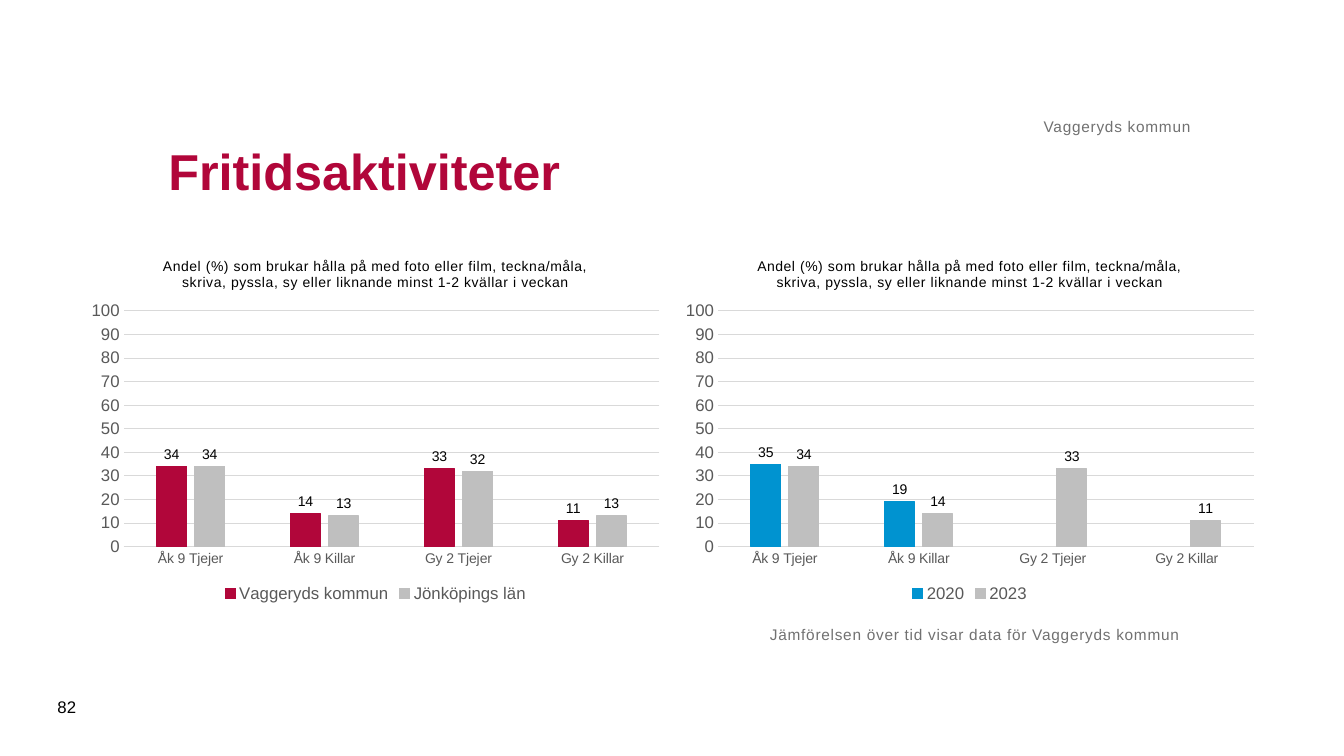
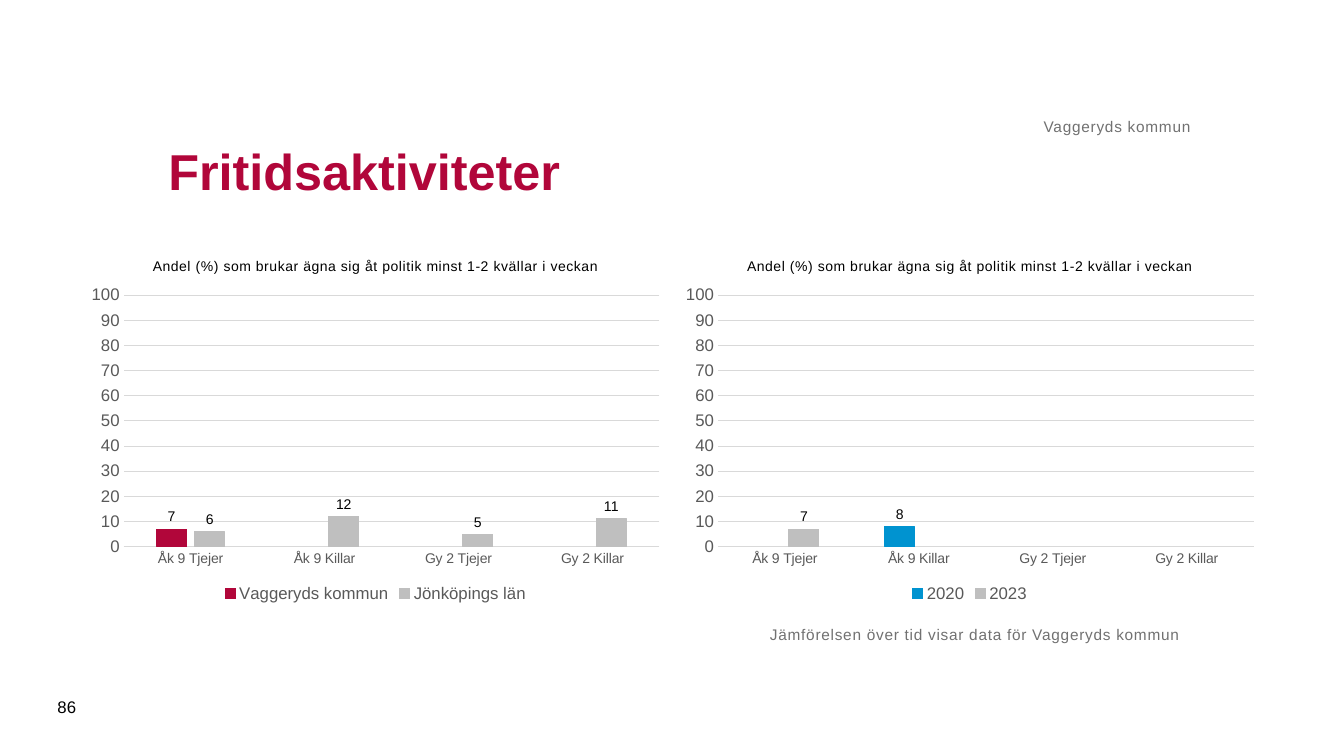
from dataclasses import dataclass

from pptx import Presentation as Deck
from pptx.chart.data import CategoryChartData as Data
from pptx.dml.color import RGBColor as Rgb
from pptx.enum.chart import XL_CHART_TYPE as Kind
from pptx.enum.chart import XL_LABEL_POSITION as Spot
from pptx.enum.chart import XL_LEGEND_POSITION as Side
from pptx.enum.chart import XL_TICK_MARK as Tick
from pptx.enum.text import MSO_ANCHOR as Anchor
from pptx.enum.text import MSO_AUTO_SIZE as Fit
from pptx.enum.text import PP_ALIGN as Align
from pptx.util import Pt

FACE = "Arial"
RED, BLUE, SILVER = "B1063A", "0093D0", "BFBFBF"
BLACK, DARK, GREY, RULE = "000000", "595959", "717171", "D9D9D9"
FORM = "#,##0;#,##0"
PLACE = "Vaggeryds kommun"
CATS = ("Åk 9 Tjejer", "Åk 9 Killar", "Gy 2 Tjejer", "Gy 2 Killar")


@dataclass(frozen=True)
class Box:
    left: float
    top: float
    width: float
    height: float

    def place(self) -> tuple:
        return Pt(self.left), Pt(self.top), Pt(self.width), Pt(self.height)


@dataclass(frozen=True)
class Style:
    size: float
    color: str
    bold: bool = False
    spread: int = 0  # letter spacing, hundredths of a point


@dataclass(frozen=True)
class Label:
    box: Box
    style: Style
    anchor: Anchor = Anchor.TOP
    align: Align = Align.LEFT
    inset: bool = False


@dataclass(frozen=True)
class Series:
    name: str
    color: str
    values: tuple


@dataclass(frozen=True)
class Page:
    number: str
    topic: str
    region: tuple
    county: tuple
    past: tuple


HEAD = Label(Box(113, 70.5, 737.5, 102), Style(36, RED, True), Anchor.MIDDLE, inset=True)
SMALL = Style(11, GREY, spread=50)
OWNER = Label(Box(113, 44.5, 737.5, 52.5), SMALL, Anchor.BOTTOM, Align.RIGHT)
NOTE = Label(Box(550, 446.5, 382.5, 67.5), SMALL)
NUMBER = Label(Box(34, 490.5, 41, 29), Style(12, BLACK), Anchor.MIDDLE, inset=True)
LEFT, RIGHT = (Box(x, 173, 422.5, 260.5) for x in (57, 481.5))
TOPIC, TICKS, NAMES = Style(10, BLACK, spread=50), Style(12, DARK), Style(10, DARK)

PAGES = (
    Page(
        "82",
        "Andel (%) som brukar hålla på med foto eller film, teckna/måla, "
        "skriva, pyssla, sy eller liknande minst 1-2 kvällar i veckan",
        (34, 14, 33, 11),
        (34, 13, 32, 13),
        (35, 19, None, None),
    ),
    Page(
        "86",
        "Andel (%) som brukar ägna sig åt politik minst 1-2 kvällar i veckan",
        (7, None, None, None),
        (6, 12, 5, 11),
        (None, 8, None, None),
    ),
)


def paint(color: str) -> Rgb:
    return Rgb.from_string(color)


def dress(font, style: Style) -> None:
    font.name, font.size, font.bold = FACE, Pt(style.size), style.bold
    font.color.rgb = paint(style.color)


def write(para, text: str, style: Style) -> None:
    run = para.add_run()
    run.text = text
    dress(run.font, style)
    if style.spread:
        run._r.get_or_add_rPr().set("spc", str(style.spread))


def fill(shape, label: Label, text: str) -> None:
    frame = shape.text_frame
    frame.word_wrap, frame.auto_size = True, Fit.NONE
    frame.vertical_anchor = label.anchor
    if not label.inset:
        frame.margin_left = frame.margin_right = Pt(0)
        frame.margin_top = frame.margin_bottom = Pt(0)
    para = frame.paragraphs[0]
    para.alignment = label.align
    write(para, text, label.style)


def rule(line, color: str) -> None:
    line.color.rgb, line.width = paint(color), Pt(0.75)


def set_axes(chart) -> None:
    cats, scale = chart.category_axis, chart.value_axis
    for axis, style in ((cats, NAMES), (scale, TICKS)):
        axis.major_tick_mark = axis.minor_tick_mark = Tick.NONE
        dress(axis.tick_labels.font, style)
    cats.has_major_gridlines = False
    rule(cats.format.line, RULE)
    scale.minimum_scale, scale.maximum_scale, scale.major_unit = 0, 100, 10
    scale.has_major_gridlines = True
    rule(scale.major_gridlines.format.line, RULE)
    scale.format.line.fill.background()
    scale.tick_labels.number_format = FORM
    scale.tick_labels.number_format_is_linked = False


def set_bars(chart, rows: tuple) -> None:
    plot = chart.plots[0]
    plot.gap_width, plot.overlap, plot.vary_by_categories = 219, -27, False
    for bars, row in zip(plot.series, rows):
        bars.invert_if_negative = False
        bars.format.fill.solid()
        bars.format.fill.fore_color.rgb = paint(row.color)
        rule(bars.format.line, row.color)
        tags = bars.data_labels
        tags.show_value, tags.position = True, Spot.OUTSIDE_END
        tags.number_format, tags.number_format_is_linked = FORM, False
        dress(tags.font, Style(10, BLACK))


def add_bars(slide, box: Box, topic: str, rows: tuple) -> None:
    data = Data()
    data.categories = CATS
    for row in rows:
        data.add_series(row.name, row.values)
    chart = slide.shapes.add_chart(Kind.COLUMN_CLUSTERED, *box.place(), data).chart
    dress(chart.font, Style(10, BLACK))
    chart.has_title = True
    write(chart.chart_title.text_frame.paragraphs[0], topic, TOPIC)
    chart.chart_title.include_in_layout = False
    chart.has_legend = True
    chart.legend.position, chart.legend.include_in_layout = Side.BOTTOM, False
    dress(chart.legend.font, TICKS)
    set_axes(chart)
    set_bars(chart, rows)


def add_page(deck, page: Page) -> None:
    slide = deck.slides.add_slide(deck.slide_layouts[5])
    title = slide.shapes.title
    title.left, title.top, title.width, title.height = HEAD.box.place()
    fill(title, HEAD, "Fritidsaktiviteter")
    add_bars(slide, LEFT, page.topic, (
        Series(PLACE, RED, page.region),
        Series("Jönköpings län", SILVER, page.county),
    ))
    add_bars(slide, RIGHT, page.topic, (
        Series("2020", BLUE, page.past),
        Series("2023", SILVER, page.region),
    ))
    for label, text in (
        (OWNER, PLACE),
        (NUMBER, page.number),
        (NOTE, f"Jämförelsen över tid visar data för {PLACE}"),
    ):
        fill(slide.shapes.add_textbox(*label.box.place()), label, text)


def main() -> None:
    deck = Deck()
    deck.slide_width, deck.slide_height = Pt(960), Pt(540)
    for page in PAGES:
        add_page(deck, page)
    deck.save("out.pptx")


if __name__ == "__main__":
    main()
